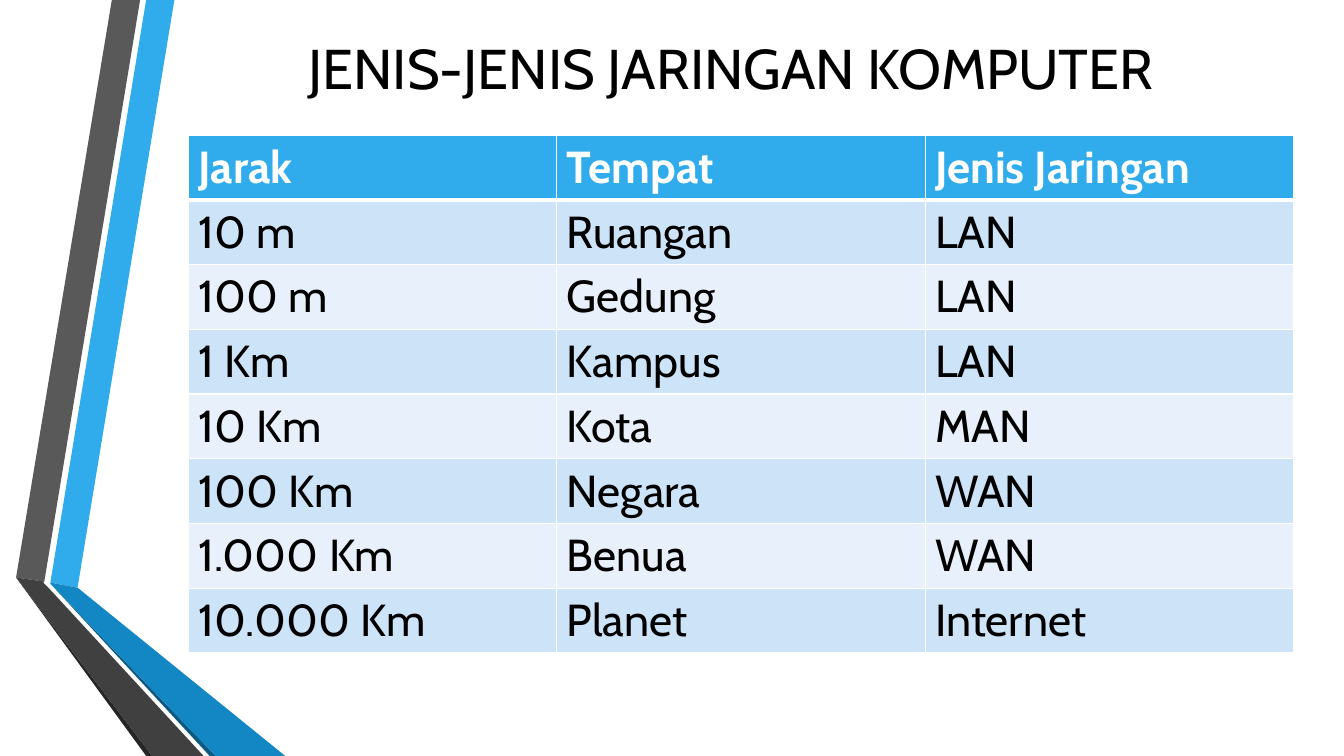
from dataclasses import dataclass

from lxml.etree import SubElement as Sub
from pptx import Presentation
from pptx.dml.color import RGBColor as Rgb
from pptx.enum.text import MSO_ANCHOR as Anchor, PP_ALIGN as Align
from pptx.oxml.ns import qn

PX = 9144


@dataclass(frozen=True)
class Theme:
    """Colours, font and type sizes of the slide."""
    font: str = "Cabin"
    title: int = 40
    body: int = 32
    ink: str = "000000"
    white: str = "FFFFFF"
    head: str = "30ACEC"
    bands: tuple = ("CDE3F8", "E8F1FB")


THEME = Theme()

RIBBONS = [
    ("30ACEC", [(50, 578), (77, 583), (173, 0), (145, 0)]),
    ("595959", [(139, 0), (111, 0), (16, 573), (44, 577)]),
    ("262626", [(16, 573), (145, 750), (151, 750)]),
    ("0C5A82", [(50, 579), (208, 750), (214, 750)]),
    ("1287C3", [(50, 579), (214, 750), (283, 750), (77, 583), (50, 578)]),
    ("404040", [(202, 750), (48, 583), (43, 578), (44, 577), (16, 573),
                (151, 750)]),
]

ROWS = [
    ("Jarak", "Tempat", "Jenis Jaringan"),
    ("10 m", "Ruangan", "LAN"),
    ("100 m", "Gedung", "LAN"),
    ("1 Km", "Kampus", "LAN"),
    ("10 Km", "Kota", "MAN"),
    ("100 Km", "Negara", "WAN"),
    ("1.000 Km", "Benua", "WAN"),
    ("10.000 Km", "Planet", "Internet"),
]


def paint(fill, color):
    """Give a fill one solid colour."""
    fill.solid()
    fill.fore_color.rgb = Rgb.from_string(color)


def style(par, size, color, bold=False):
    """Format every run of a paragraph."""
    for run in par.runs:
        font = run.font
        font.name, font.size, font.bold = THEME.font, size * 12700, bold
        font.color.rgb = Rgb.from_string(color)


def add_ribbon(slide, color, points):
    """Draw one closed facet of the folded ribbons."""
    pen = slide.shapes.build_freeform(*points[0], scale=PX)
    pen.add_line_segments(points[1:], close=True)
    shape = pen.convert_to_shape()
    shape.shadow.inherit = False
    paint(shape.fill, color)
    shape.line.fill.background()


def add_title(slide, text, left, top, width, height):
    """Place and format the title."""
    title = slide.shapes.title
    title.left, title.top = left * PX, top * PX
    title.width, title.height = width * PX, height * PX
    frame = title.text_frame
    frame.text = text
    frame.vertical_anchor = Anchor.MIDDLE
    par = frame.paragraphs[0]
    par.alignment = Align.CENTER
    style(par, THEME.title, THEME.ink)


def add_edge(cell, side, points):
    """Draw one white border of a cell."""
    props = cell._tc.get_or_add_tcPr()
    line = Sub(props, qn(f"a:ln{side}"), w=str(points * 12700))
    Sub(Sub(line, qn("a:solidFill")), qn("a:srgbClr"), val=THEME.white)


def fill_cell(cell, text, row):
    """Write a cell with the look of its row."""
    head = row == 0
    cell.text = text
    style(cell.text_frame.paragraphs[0], THEME.body,
          THEME.white if head else THEME.ink, head)
    widths = {"L": 1, "R": 1, "T": 3 if row == 1 else 1, "B": 3 if head else 1}
    for side, points in widths.items():
        add_edge(cell, side, points)
    paint(cell.fill, THEME.head if head else THEME.bands[(row - 1) % 2])


def add_grid(slide, rows, left, top, width, height):
    """Add the table with equal columns and rows."""
    shape = slide.shapes.add_table(len(rows), len(rows[0]), left * PX,
                                   top * PX, width * PX, height * PX)
    for row, texts in enumerate(rows):
        for col, text in enumerate(texts):
            fill_cell(shape.table.cell(row, col), text, row)


def main():
    """Build and save the slide."""
    deck = Presentation()
    deck.slide_width, deck.slide_height = 1333 * PX, 750 * PX
    slide = deck.slides.add_slide(deck.slide_layouts[5])
    for color, points in RIBBONS:
        add_ribbon(slide, color, points)
    add_title(slide, "JENIS-JENIS JARINGAN KOMPUTER", 177, 0, 1096, 134)
    add_grid(slide, ROWS, 187, 134, 1096, 512)
    deck.save("out.pptx")


if __name__ == "__main__":
    main()
